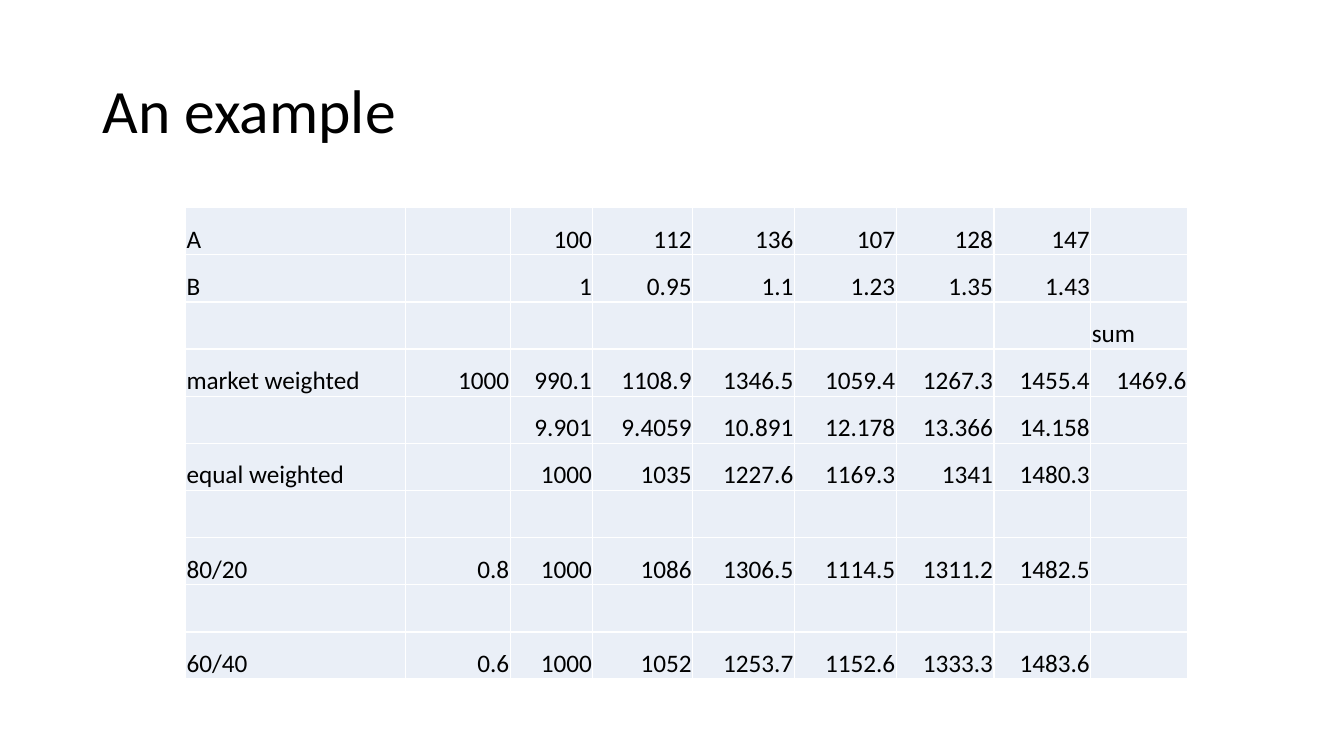
import dataclasses

import lxml.etree
import pptx
import pptx.dml.color
import pptx.enum.text
import pptx.oxml.ns
import pptx.slide
import pptx.table
import pptx.text.text
import pptx.util

PX = 9144  # EMU in one px, at 100 px to the inch
FONT = "Calibri"
BLACK, WHITE, PALE = "000000", "FFFFFF", "EAEFF7"
WIDTHS = [218, 104, 82, 99, 101, 101, 97, 96, 96]


@dataclasses.dataclass
class Row:
    label: str = ""
    start: str = ""
    values: tuple[str, ...] = ("",) * 6
    total: str = ""

    def texts(self) -> list[str]:
        return [self.label, self.start, *self.values, self.total]


ROWS = [
    Row("A", values=("100", "112", "136", "107", "128", "147")),
    Row("B", values=("1", "0.95", "1.1", "1.23", "1.35", "1.43")),
    Row(total="sum"),
    Row("market weighted", "1000",
        ("990.1", "1108.9", "1346.5", "1059.4", "1267.3", "1455.4"), "1469.6"),
    Row(values=("9.901", "9.4059", "10.891", "12.178", "13.366", "14.158")),
    Row("equal weighted",
        values=("1000", "1035", "1227.6", "1169.3", "1341", "1480.3")),
    Row(),
    Row("80/20", "0.8", ("1000", "1086", "1306.5", "1114.5", "1311.2", "1482.5")),
    Row(),
    Row("60/40", "0.6", ("1000", "1052", "1253.7", "1152.6", "1333.3", "1483.6")),
]


def px(count: int) -> pptx.util.Emu:
    return pptx.util.Emu(count * PX)


def color(code: str) -> pptx.dml.color.RGBColor:
    return pptx.dml.color.RGBColor.from_string(code)


def style(frame: pptx.text.text.TextFrame, size: int) -> None:
    for para in frame.paragraphs:
        for run in para.runs:
            run.font.name = FONT
            run.font.size = pptx.util.Pt(size)
            run.font.color.rgb = color(BLACK)


def add_title(slide: pptx.slide.Slide, text: str) -> None:
    frame = slide.shapes.add_textbox(px(92), px(40), px(1150), px(145)).text_frame
    frame.word_wrap = True
    frame.vertical_anchor = pptx.enum.text.MSO_ANCHOR.MIDDLE
    frame.text = text
    frame.paragraphs[0].line_spacing = 0.9
    style(frame, 44)


def add_border(cell: pptx.table._Cell) -> None:
    props = cell._tc.get_or_add_tcPr()
    for place, side in enumerate(("lnL", "lnR", "lnT", "lnB")):
        line = lxml.etree.Element(pptx.oxml.ns.qn(f"a:{side}"), w=str(pptx.util.Pt(1)))
        fill = lxml.etree.SubElement(line, pptx.oxml.ns.qn("a:solidFill"))
        lxml.etree.SubElement(fill, pptx.oxml.ns.qn("a:srgbClr"), val=WHITE)
        props.insert(place, line)


def fill_cell(cell: pptx.table._Cell, text: str) -> None:
    """Format one cell; numbers go right, words go left."""
    cell.fill.solid()
    cell.fill.fore_color.rgb = color(PALE)
    add_border(cell)
    cell.margin_left = cell.margin_right = cell.margin_top = px(1)
    cell.margin_bottom = px(0)
    cell.vertical_anchor = pptx.enum.text.MSO_ANCHOR.BOTTOM
    cell.text_frame.text = text
    if text.replace(".", "").isdigit():
        cell.text_frame.paragraphs[0].alignment = pptx.enum.text.PP_ALIGN.RIGHT
    style(cell.text_frame, 18)


def add_grid(slide: pptx.slide.Slide) -> None:
    table = slide.shapes.add_table(
        len(ROWS), len(WIDTHS), px(184), px(206), px(sum(WIDTHS)), px(468)).table
    table.first_row = table.horz_banding = False
    for column, width in zip(table.columns, WIDTHS):
        column.width = px(width)
    for line, row in zip(table.rows, ROWS):
        for cell, text in zip(line.cells, row.texts()):
            fill_cell(cell, text)


def main() -> None:
    deck = pptx.Presentation()
    deck.slide_width, deck.slide_height = px(1333), px(750)
    slide = deck.slides.add_slide(deck.slide_layouts[6])
    add_title(slide, "An example")
    add_grid(slide)
    deck.save("out.pptx")


if __name__ == "__main__":
    main()
